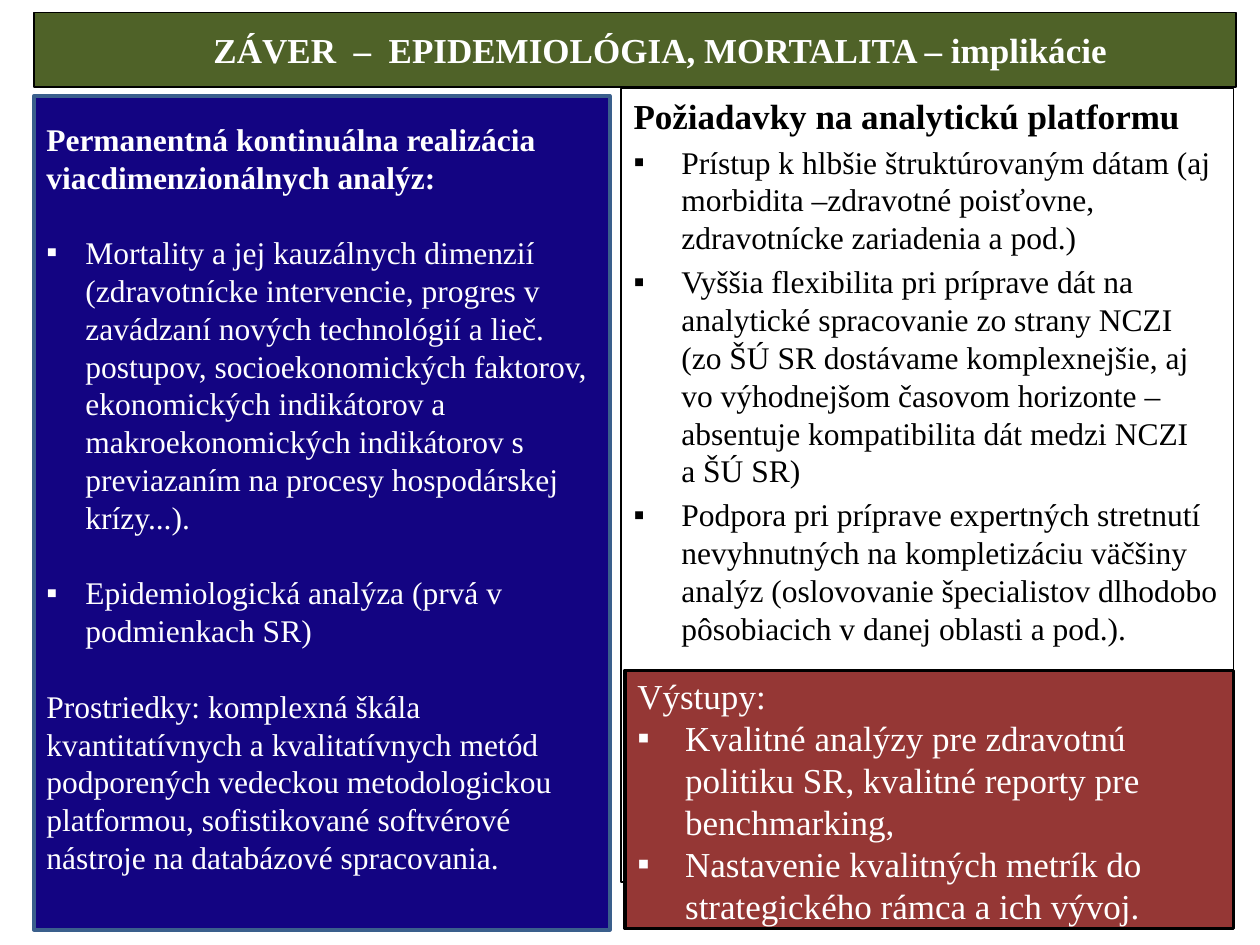
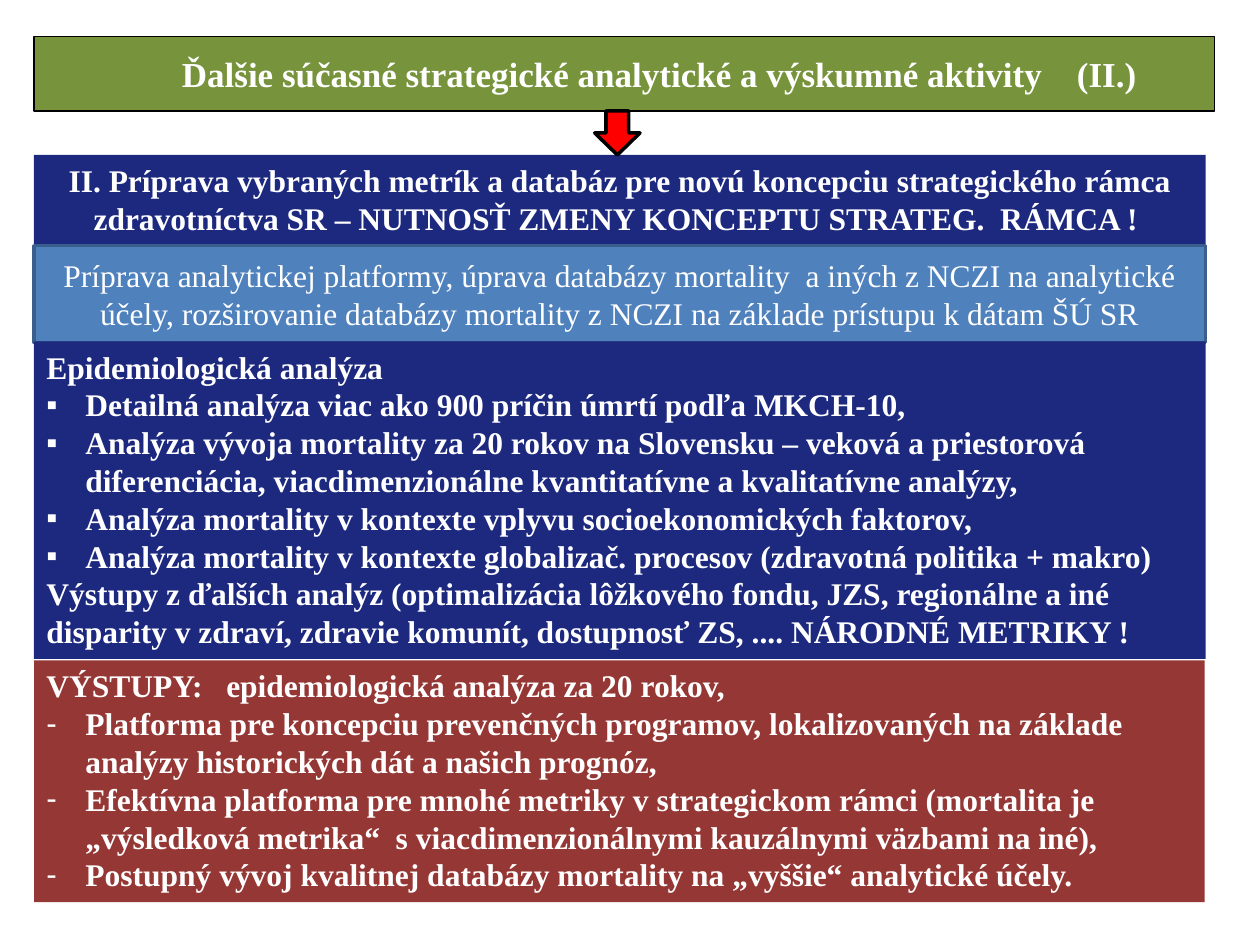
from lxml.etree import SubElement
from pptx import Presentation
from pptx.dml.color import RGBColor
from pptx.enum.shapes import MSO_SHAPE
from pptx.enum.text import MSO_ANCHOR, PP_ALIGN
from pptx.oxml.ns import qn
from pptx.util import Inches, Pt

FONT = "Times New Roman"
WHITE, BLACK = "FFFFFF", "000000"
DARK_GREEN, GREEN = "4F6228", "77933C"
DEEP_BLUE, NAVY, LIGHT_BLUE, STEEL = "130482", "1D297F", "4F81BD", "3A5F8C"
BRICK, RED = "953735", "FF0000"
LEFT = 0.27
BAND_WIDTH = 9.3
BLANK_LINE = 21.6


def color(hex_string):
    return RGBColor.from_string(hex_string)


def write(paragraph, text, size=18, bold=False, ink=WHITE, align=PP_ALIGN.LEFT,
          bullet=None, indent=0.31, before=0):
    """Fill a paragraph; a newline in the text becomes a line break."""
    paragraph.text = text
    paragraph.alignment = align
    paragraph.space_before = Pt(before)
    for run in paragraph.runs:
        run.font.name = FONT
        run.font.size = Pt(size)
        run.font.bold = bold
        run.font.color.rgb = color(ink)
    if bullet:
        properties = paragraph._p.get_or_add_pPr()
        properties.set("marL", str(Inches(indent)))
        properties.set("indent", str(-Inches(indent)))
        SubElement(properties, qn("a:buFont")).set("typeface", "Arial")
        SubElement(properties, qn("a:buChar")).set("char", bullet)


class Deck:
    """Holds the presentation and the slide being drawn."""

    def __init__(self):
        self.presentation = Presentation()
        self.presentation.slide_width = Inches(10)
        self.presentation.slide_height = Inches(7.5)
        self.slide = None

    def new_slide(self):
        self.slide = self.presentation.slides.add_slide(self.presentation.slide_layouts[6])

    def shape(self, left, top, width, height, fill=None, line=None, line_width=2.0,
              kind=MSO_SHAPE.RECTANGLE):
        shape = self.slide.shapes.add_shape(
            kind, Inches(left), Inches(top), Inches(width), Inches(height))
        shape.shadow.inherit = False
        if fill:
            shape.fill.solid()
            shape.fill.fore_color.rgb = color(fill)
        else:
            shape.fill.background()
        if line:
            shape.line.color.rgb = color(line)
            shape.line.width = Pt(line_width)
        else:
            shape.line.fill.background()
        return shape

    def panel(self, left, top, width, height, paragraphs, anchor=MSO_ANCHOR.TOP,
              margin_left=0.1, margin_top=0.05, line=None, line_width=2.0, fill=None, **style):
        """Box of text; each paragraph is a string or (string, own format)."""
        frame = self.shape(left, top, width, height, fill, line, line_width).text_frame
        frame.word_wrap = True
        frame.vertical_anchor = anchor
        frame.margin_left = Inches(margin_left)
        frame.margin_top = Inches(margin_top)
        for number, item in enumerate(paragraphs):
            text, own = (item, {}) if isinstance(item, str) else item
            paragraph = frame.add_paragraph() if number else frame.paragraphs[0]
            write(paragraph, text, **{**style, **own})

    def title(self, text, top, width, fill, shift):
        """Title band; shift moves the centred text to the right."""
        self.panel(LEFT, top, width, 0.59, [text], fill=fill, line=BLACK, line_width=0.75,
                   anchor=MSO_ANCHOR.MIDDLE, margin_left=0.1 + 2 * shift,
                   size=20, bold=True, align=PP_ALIGN.CENTER)

    def band(self, top, height, paragraphs, width=BAND_WIDTH, **style):
        self.panel(LEFT, top, width, height, paragraphs, **style)

    def arrow(self, left, top, width, height):
        self.shape(left, top, width, height, RED, BLACK, kind=MSO_SHAPE.DOWN_ARROW)


def listed(*texts, bullet="▪", **style):
    return [(text, {"bullet": bullet, **style}) for text in texts]


def add_conclusion(deck):
    deck.new_slide()
    deck.panel(4.93, 0.7, 4.86, 6.3, [
        ("Požiadavky na analytickú platformu", {"size": 20, "bold": True}),
        *listed(
            "Prístup k hlbšie štruktúrovaným dátam (aj morbidita –zdravotné poisťovne, "
            "zdravotnícke zariadenia a pod.)",
            "Vyššia flexibilita pri príprave dát na analytické spracovanie zo strany NCZI \n"
            "(zo ŠÚ SR dostávame komplexnejšie, aj vo výhodnejšom časovom horizonte – "
            "absentuje kompatibilita dát medzi NCZI \na ŠÚ SR)",
            "Podpora pri príprave expertných stretnutí nevyhnutných na kompletizáciu väčšiny "
            "analýz (oslovovanie špecialistov dlhodobo pôsobiacich v danej oblasti a pod.).",
            indent=0.38, before=3.6),
    ], line=BLACK, line_width=0.75, ink=BLACK)
    deck.title("ZÁVER  –  EPIDEMIOLÓGIA, MORTALITA – implikácie", 0.1, 9.54, DARK_GREEN, 0.2)
    deck.panel(LEFT, 0.76, 4.57, 6.62, [
        ("Permanentná kontinuálna realizácia viacdimenzionálnych analýz:", {"bold": True}),
        *listed(
            "Mortality a jej kauzálnych dimenzií (zdravotnícke intervencie, progres v zavádzaní "
            "nových technológií a lieč. postupov, socioekonomických faktorov, ekonomických "
            "indikátorov a makroekonomických indikátorov s previazaním na procesy "
            "hospodárskej krízy...).",
            "Epidemiologická analýza (prvá v podmienkach SR)",
            before=BLANK_LINE),
        ("Prostriedky: komplexná škála kvantitatívnych a kvalitatívnych metód podporených "
         "vedeckou metodologickou platformou, sofistikované softvérové nástroje na databázové "
         "spracovania.", {"before": BLANK_LINE}),
    ], fill=DEEP_BLUE, line=STEEL, margin_top=0.19)
    deck.panel(4.96, 5.32, 4.83, 2.05, [
        "Výstupy:",
        *listed(
            "Kvalitné analýzy pre zdravotnú politiku SR, kvalitné reporty pre benchmarking,",
            "Nastavenie kvalitných metrík do strategického rámca a ich vývoj.",
            indent=0.38),
    ], fill=BRICK, line=BLACK, margin_top=0.03, size=20)


def add_activities(deck):
    deck.new_slide()
    deck.title("Ďalšie súčasné strategické analytické a výskumné aktivity    (II.)",
               0.29, 9.37, GREEN, 0.28)
    deck.band(1.23, 0.71, [
        "II. Príprava vybraných metrík a databáz pre novú koncepciu strategického rámca "
        "zdravotníctva SR – NUTNOSŤ ZMENY KONCEPTU STRATEG.  RÁMCA ! ",
    ], fill=NAVY, bold=True, align=PP_ALIGN.CENTER)
    deck.band(5.24, 1.92, [
        "VÝSTUPY:   epidemiologická analýza za 20 rokov,",
        *listed(
            "Platforma pre koncepciu prevenčných programov, lokalizovaných na základe analýzy "
            "historických dát a našich prognóz,",
            "Efektívna platforma pre mnohé metriky v strategickom rámci (mortalita je "
            "„výsledková metrika“  s viacdimenzionálnymi kauzálnymi väzbami na iné),",
            "Postupný vývoj kvalitnej databázy mortality na „vyššie“ analytické účely.",
            bullet="-"),
    ], width=9.29, fill=BRICK, bold=True)
    deck.band(1.95, 0.77, [
        "Príprava analytickej platformy, úprava databázy mortality  a iných z NCZI na "
        "analytické účely, rozširovanie databázy mortality z NCZI na základe prístupu "
        "k dátam ŠÚ SR",
    ], fill=LIGHT_BLUE, line=STEEL, anchor=MSO_ANCHOR.MIDDLE, align=PP_ALIGN.CENTER)
    deck.band(2.71, 2.52, [
        "Epidemiologická analýza",
        *listed(
            "Detailná analýza viac ako 900 príčin úmrtí podľa MKCH-10,",
            "Analýza vývoja mortality za 20 rokov na Slovensku – veková a priestorová "
            "diferenciácia, viacdimenzionálne kvantitatívne a kvalitatívne analýzy,",
            "Analýza mortality v kontexte vplyvu socioekonomických faktorov,",
            "Analýza mortality v kontexte globalizač. procesov (zdravotná politika + makro)"),
        "Výstupy z ďalších analýz (optimalizácia lôžkového fondu, JZS, regionálne a iné "
        "disparity v zdraví, zdravie komunít, dostupnosť ZS, .... NÁRODNÉ METRIKY !",
    ], fill=NAVY, bold=True)
    deck.arrow(4.72, 0.88, 0.36, 0.35)


def main():
    deck = Deck()
    add_conclusion(deck)
    add_activities(deck)
    deck.presentation.save("out.pptx")


if __name__ == "__main__":
    main()
